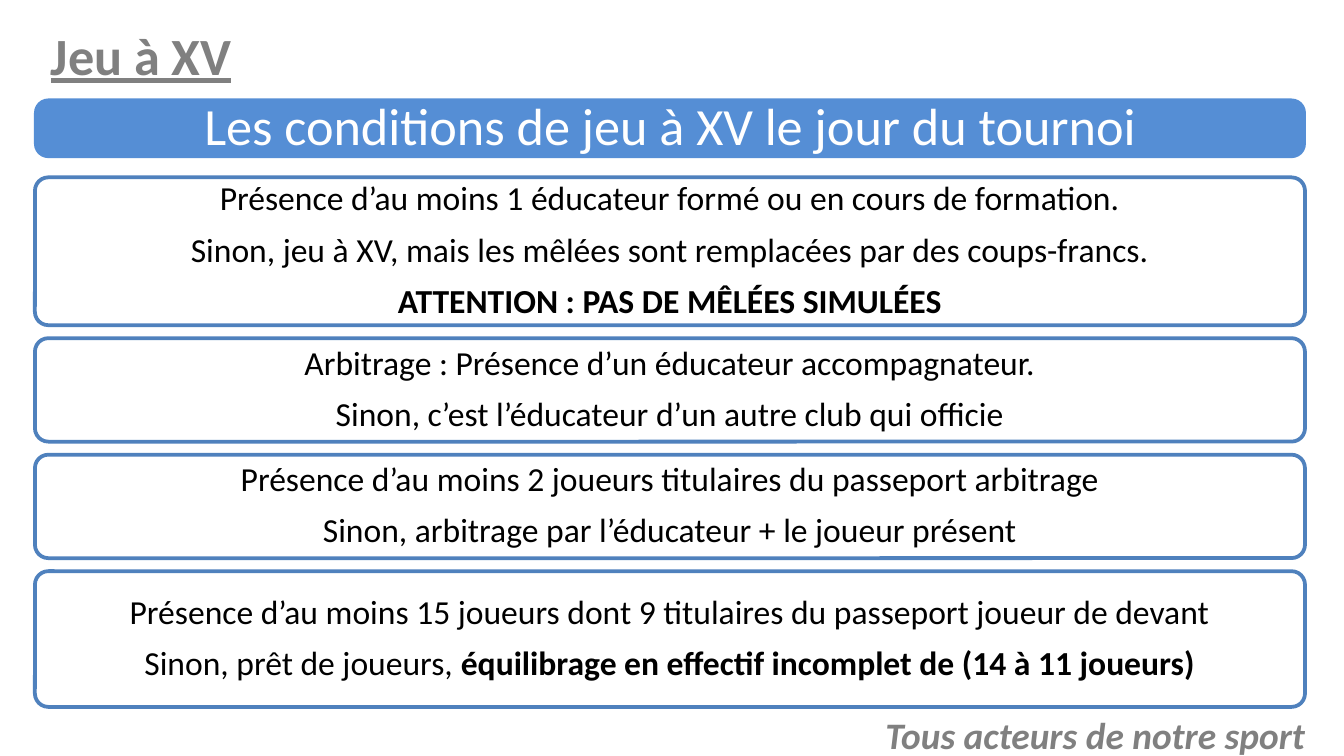
"""Build the slide on the conditions for playing fifteen-a-side on tournament day."""
import pptx
import pptx.util
import pptx.dml.color
import pptx.enum.shapes
import pptx.enum.text

Inches = pptx.util.Inches
Pt = pptx.util.Pt
RGB = pptx.dml.color.RGBColor.from_string
ALIGN = pptx.enum.text.PP_ALIGN
ANCHOR = pptx.enum.text.MSO_ANCHOR

TITLE = "Jeu à XV"
BANNER = "Les conditions de jeu à XV le jour du tournoi"
SLOGAN = "Tous acteurs de notre sport"
CONDITIONS = [
    (1.1, [
        [("Présence d’au moins 1 éducateur formé ou en cours de formation.", False)],
        [("Sinon, jeu à XV, mais les mêlées sont remplacées par des coups-francs.", False)],
        [("ATTENTION : PAS DE MÊLÉES SIMULÉES", True)],
    ]),
    (0.77, [
        [("Arbitrage : Présence d’un éducateur accompagnateur.", False)],
        [("Sinon, c’est l’éducateur d’un autre club qui officie", False)],
    ]),
    (0.77, [
        [("Présence d’au moins 2 joueurs titulaires du passeport arbitrage", False)],
        [("Sinon, arbitrage par l’éducateur + le joueur présent", False)],
    ]),
    (1.01, [
        [("Présence d’au moins 15 joueurs dont 9 titulaires du passeport joueur de devant", False)],
        [("Sinon, prêt de joueurs, ", False),
         ("équilibrage en effectif incomplet de (14 à 11 joueurs)", True)],
    ]),
]

THEME = {
    "font": "Calibri",
    "banner": {"fill": "558ED5", "line": "558ED5", "width": 1, "text": "FFFFFF", "size": 28, "after": 10},
    "card": {"fill": "FFFFFF", "line": "4F81BD", "width": 2, "text": "000000", "size": 18, "after": 8},
    "title": {"text": "808080", "size": 28, "bold": True, "underline": True},
    "slogan": {"text": "808080", "size": 20, "bold": True, "italic": True},
}
SLIDE_WIDTH = 10
SLIDE_HEIGHT = SLIDE_WIDTH * 9 / 16
LEFT, WIDTH = 0.26, 9.45
CARDS_TOP, CARDS_BOTTOM = 1.32, 5.26
RADIUS, INSET = 0.1, 0.08


def apply(target, formats):
    for attribute, value in formats.items():
        setattr(target, attribute, value)


def write(frame, lines, style, paragraph_format):
    for index, line in enumerate(lines):
        paragraph = frame.paragraphs[0] if index == 0 else frame.add_paragraph()
        apply(paragraph, paragraph_format)
        for words, bold in line:
            run = paragraph.add_run()
            run.text = words
            apply(run.font, {
                "name": THEME["font"], "size": Pt(style["size"]),
                "bold": bold or style.get("bold", False),
                "italic": style.get("italic", False),
                "underline": style.get("underline", False),
            })
            run.font.color.rgb = RGB(style["text"])


def add_panel(slide, top, height, lines, style):
    panel = slide.shapes.add_shape(
        pptx.enum.shapes.MSO_SHAPE.ROUNDED_RECTANGLE,
        Inches(LEFT), Inches(top), Inches(WIDTH), Inches(height))
    panel.adjustments[0] = RADIUS / height
    panel.shadow.inherit = False
    panel.fill.solid()
    panel.fill.fore_color.rgb = RGB(style["fill"])
    panel.line.color.rgb = RGB(style["line"])
    panel.line.width = Pt(style["width"])
    margins = {f"margin_{side}": Inches(INSET) for side in ("left", "top", "right", "bottom")}
    apply(panel.text_frame, {"word_wrap": True, "vertical_anchor": ANCHOR.MIDDLE, **margins})
    write(panel.text_frame, lines, style,
          {"alignment": ALIGN.CENTER, "line_spacing": 0.9, "space_after": Pt(style["after"])})


def add_label(slide, place, words, style, anchor, alignment):
    label = slide.shapes.add_textbox(*map(Inches, place))
    apply(label.text_frame, {"word_wrap": True, "vertical_anchor": anchor})
    write(label.text_frame, [[(words, False)]], style, {"alignment": alignment})


def main():
    deck = pptx.Presentation()
    apply(deck, {"slide_width": Inches(SLIDE_WIDTH), "slide_height": Inches(SLIDE_HEIGHT)})
    slide = deck.slides.add_slide(deck.slide_layouts[6])

    add_panel(slide, 0.74, 0.43, [[(BANNER, False)]], THEME["banner"])
    used = sum(height for height, _ in CONDITIONS)
    gap = (CARDS_BOTTOM - CARDS_TOP - used) / (len(CONDITIONS) - 1)
    top = CARDS_TOP
    for height, lines in CONDITIONS:
        add_panel(slide, top, height, lines, THEME["card"])
        top += height + gap

    add_label(slide, (6.42, 5.25, 3.46, 0.37), SLOGAN, THEME["slogan"], ANCHOR.TOP, ALIGN.CENTER)
    add_label(slide, (0.28, 0.14, 9.45, 0.53), TITLE, THEME["title"], ANCHOR.MIDDLE, ALIGN.LEFT)
    deck.save("out.pptx")


if __name__ == "__main__":
    main()
